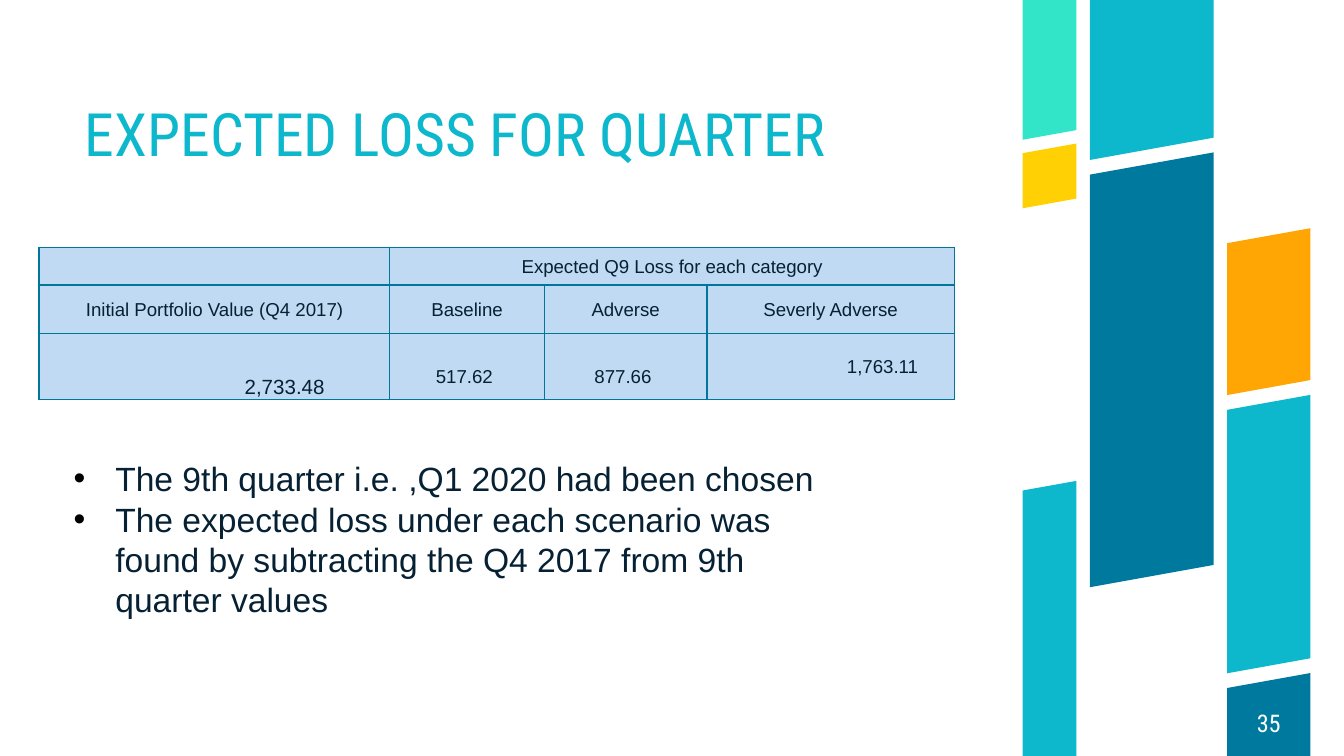
"""Build the slide on the expected loss for the quarter."""
from pptx import Presentation
from pptx.dml.color import RGBColor
from pptx.enum.text import MSO_ANCHOR as Anchor, PP_ALIGN as Align
from pptx.oxml.ns import qn
from pptx.util import Inches, Pt
from lxml.etree import SubElement

CYAN = RGBColor(0x0D, 0xB8, 0xCC)
BLUE = RGBColor(0x00, 0x79, 0x9E)
MINT = RGBColor(0x32, 0xE4, 0xC8)
YELLOW = RGBColor(0xFF, 0xD1, 0x04)
ORANGE = RGBColor(0xFF, 0xA6, 0x04)
NAVY = RGBColor(0x06, 0x21, 0x33)
PALE = RGBColor(0xC0, 0xDA, 0xF3)
BORDER = RGBColor(0x00, 0x76, 0x9B)
WHITE = RGBColor(0xFF, 0xFF, 0xFF)
BLACK = RGBColor(0x00, 0x00, 0x00)

WIDTH = 10
HEIGHT = WIDTH * 9 / 16
SLOPE = 0.18
HEADING_FONT, BODY_FONT = "Roboto Condensed", "Arial"

BAR_COLUMNS = [
    (7.61, 0.4, [(0, 1.04, MINT), (1.14, 1.55, YELLOW), (3.65, HEIGHT, CYAN)]),
    (8.11, 0.92, [(0, 1.19, CYAN), (1.3, 4.37, BLUE)]),
    (9.13, 0.62, [(1.81, 2.94, ORANGE), (3.05, 5.01, CYAN), (5.12, HEIGHT, BLUE)]),
]
COLUMN_WIDTHS = [2.61, 1.15, 1.21, 1.84]
ROW_HEIGHTS = [0.28, 0.36, 0.49]
LOSS_ROWS = [
    ["", "Expected Q9 Loss for each category", "", ""],
    ["Initial Portfolio Value (Q4 2017)", "Baseline", "Adverse", "Severly Adverse"],
    ["2,733.48", "517.62", "877.66", "1,763.11"],
]
POINTS = [
    "The 9th quarter i.e. ,Q1 2020 had been chosen",
    "The expected loss under each scenario was found by subtracting "
    "the Q4 2017 from 9th quarter values",
]


def style_runs(paragraph, size, color, font):
    """Give every run of a paragraph its size, colour and font."""
    for run in paragraph.runs:
        run.font.size = Pt(size)
        run.font.color.rgb = color
        run.font.name = font


def add_bar(slide, left, width, top, bottom, color):
    """Draw a slanted bar, cut flat where it meets the slide edge."""
    rise = width * SLOPE
    right = left + width
    right_top = max(0, top - rise)
    right_bottom = HEIGHT if bottom == HEIGHT else bottom - rise
    corners = [(left, top), (right, right_top), (right, right_bottom), (left, bottom)]
    outline = [(Inches(x), Inches(y)) for x, y in corners]
    builder = slide.shapes.build_freeform(*outline[0])
    builder.add_line_segments(outline[1:])
    bar = builder.convert_to_shape()
    bar.shadow.inherit = False
    bar.fill.solid()
    bar.fill.fore_color.rgb = color
    bar.line.fill.background()


def add_text_frame(slide, left, top, width, height, anchor):
    """Add a wrapping text box and return its text frame."""
    box = slide.shapes.add_textbox(
        Inches(left), Inches(top), Inches(width), Inches(height))
    frame = box.text_frame
    frame.word_wrap = True
    frame.vertical_anchor = anchor
    return frame


def add_label(slide, place, text, size, color, anchor, align):
    """Add one line of heading type without insets."""
    frame = add_text_frame(slide, *place, anchor)
    frame.margin_left = frame.margin_right = 0
    frame.margin_top = frame.margin_bottom = 0
    frame.text = text
    line = frame.paragraphs[0]
    line.alignment = align
    style_runs(line, size, color, HEADING_FONT)
    return line


def add_points(slide):
    """Add the bulleted remarks below the table."""
    frame = add_text_frame(slide, 0.45, 3.36, 5.95, 1.01, Anchor.TOP)
    frame.text = "\n".join(POINTS)
    for point in frame.paragraphs:
        style_runs(point, 18, NAVY, BODY_FONT)
        properties = point._p.get_or_add_pPr()
        properties.set("marL", str(Inches(0.31)))
        properties.set("indent", str(-Inches(0.31)))
        bullet_color = SubElement(properties, qn("a:buClr"))
        SubElement(bullet_color, qn("a:srgbClr"), val=str(BLACK))
        SubElement(properties, qn("a:buFont"), typeface=BODY_FONT)
        SubElement(properties, qn("a:buChar"), char="•")


def add_borders(cell):
    """Draw a thin line on the four sides of a cell."""
    properties = cell._tc.get_or_add_tcPr()
    for index, side in enumerate(("lnL", "lnR", "lnT", "lnB")):
        line = properties.makeelement(qn(f"a:{side}"), {"w": str(Pt(0.75))})
        fill = SubElement(line, qn("a:solidFill"))
        SubElement(fill, qn("a:srgbClr"), val=str(BORDER))
        properties.insert(index, line)


def fill_cell(cell, text, size=10):
    """Write centred text in a pale, bordered cell."""
    cell.text = text
    cell.vertical_anchor = Anchor.MIDDLE
    cell.margin_left = cell.margin_right = cell.margin_top = Inches(0.01)
    cell.margin_bottom = 0
    cell.fill.solid()
    cell.fill.fore_color.rgb = PALE
    add_borders(cell)
    line = cell.text_frame.paragraphs[0]
    line.alignment = Align.CENTER
    style_runs(line, size, NAVY, BODY_FONT)
    if not text:
        SubElement(line._p, qn("a:endParaRPr"), sz=str(size * 100))


def add_loss_table(slide):
    """Add the table of expected losses by scenario."""
    table = slide.shapes.add_table(
        len(ROW_HEIGHTS), len(COLUMN_WIDTHS), Inches(0.29), Inches(1.84),
        Inches(sum(COLUMN_WIDTHS)), Inches(sum(ROW_HEIGHTS))).table
    table.first_row = table.horz_banding = False
    for column, width in zip(table.columns, COLUMN_WIDTHS):
        column.width = Inches(width)
    for row, height in zip(table.rows, ROW_HEIGHTS):
        row.height = Inches(height)
    for row, texts in zip(table.rows, LOSS_ROWS):
        for cell, text in zip(row.cells, texts):
            fill_cell(cell, text)
    table.cell(0, 1).merge(table.cell(0, 3))

    portfolio, baseline, adverse, severe = table.rows[2].cells
    portfolio.vertical_anchor = Anchor.BOTTOM
    portfolio.margin_left = Inches(1.53)
    portfolio_line = portfolio.text_frame.paragraphs[0]
    portfolio_line.alignment = Align.LEFT
    style_runs(portfolio_line, 11, NAVY, BODY_FONT)
    for cell in (baseline, adverse):
        cell.margin_top = Inches(0.16)
        cell.margin_right = Inches(0.05)
    severe.margin_right = Inches(0.27)
    severe.text_frame.paragraphs[0].alignment = Align.RIGHT


def main():
    """Build and save the slide."""
    deck = Presentation()
    deck.slide_width, deck.slide_height = Inches(WIDTH), Inches(HEIGHT)
    slide = deck.slides.add_slide(deck.slide_layouts[6])
    for left, width, bars in BAR_COLUMNS:
        for top, bottom, color in bars:
            add_bar(slide, left, width, top, bottom, color)
    title = add_label(slide, (0.63, 0.83, 6.65, 0.43), "EXPECTED LOSS FOR QUARTER",
                      32, CYAN, Anchor.BOTTOM, Align.LEFT)
    title.line_spacing = 0.9
    add_label(slide, (9.13, 5.13, 0.62, 0.5), "35", 13, WHITE,
              Anchor.MIDDLE, Align.CENTER)
    add_loss_table(slide)
    add_points(slide)
    deck.save("out.pptx")


if __name__ == "__main__":
    main()
